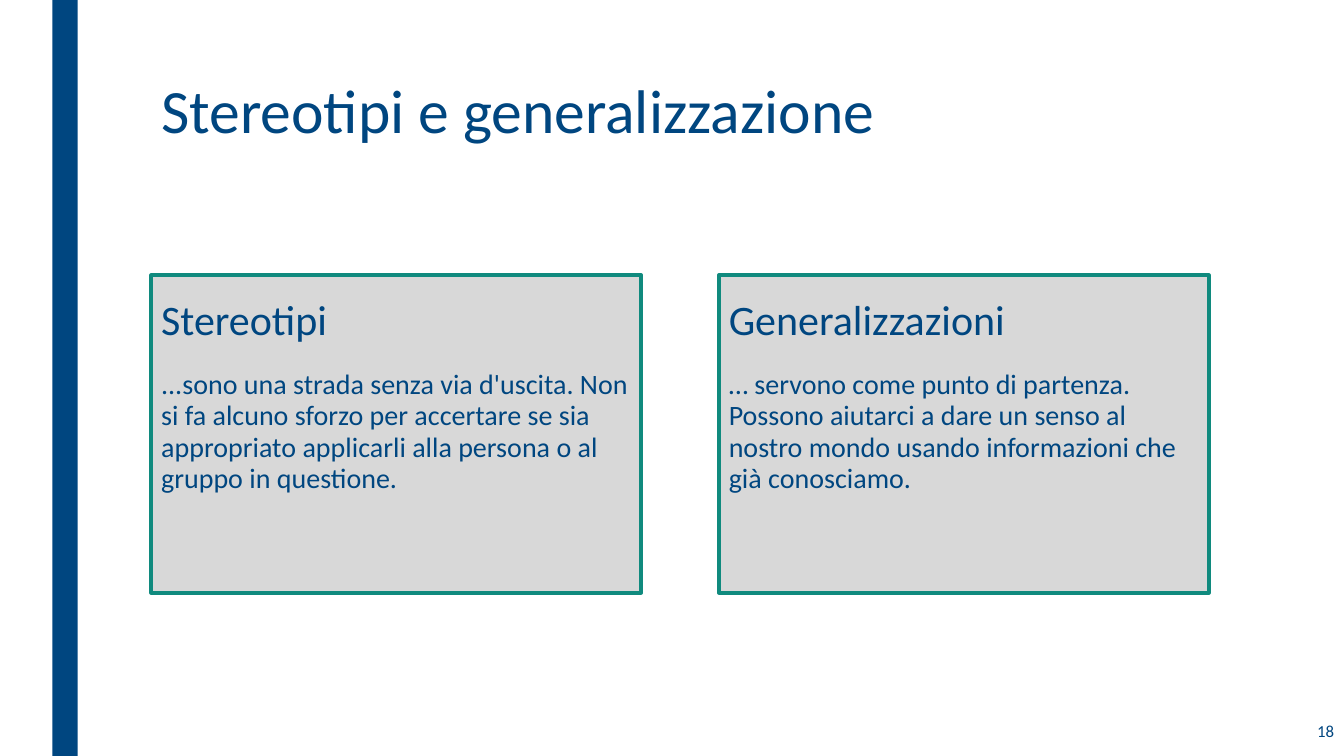
from dataclasses import dataclass

from pptx import Presentation
from pptx.dml.color import RGBColor
from pptx.enum.shapes import MSO_SHAPE
from pptx.enum.text import MSO_ANCHOR, PP_ALIGN
from pptx.util import Inches, Pt

RECTANGLE = MSO_SHAPE.RECTANGLE
TOP, MIDDLE, BOTTOM = MSO_ANCHOR.TOP, MSO_ANCHOR.MIDDLE, MSO_ANCHOR.BOTTOM
LEFT, RIGHT = PP_ALIGN.LEFT, PP_ALIGN.RIGHT


@dataclass(frozen=True)
class Theme:
    font: str = "Calibri"
    navy: RGBColor = RGBColor(0x00, 0x46, 0x80)
    grey: RGBColor = RGBColor(0xD8, 0xD8, 0xD8)
    green: RGBColor = RGBColor(0x10, 0x8A, 0x7E)
    title_size: int = 44
    heading_size: int = 30
    body_size: int = 20
    number_size: int = 12
    border_width: float = 2.75


THEME = Theme()
CARD_LEFT = 1.5
CARD_WIDTH = 4.86
CARD_STEP = 5.63
CARDS = [
    ("Stereotipi",
     "...sono una strada senza via d'uscita. Non si fa alcuno sforzo per accertare "
     "se sia appropriato applicarli alla persona o al gruppo in questione."),
    ("Generalizzazioni",
     "… servono come punto di partenza. Possono aiutarci a dare un senso al nostro "
     "mondo usando informazioni che già conosciamo."),
]


def add_panel(page, left, top, width, height, fill, border=None):
    panel = page.shapes.add_shape(
        RECTANGLE, Inches(left), Inches(top), Inches(width), Inches(height))
    panel.shadow.inherit = False
    panel.fill.solid()
    panel.fill.fore_color.rgb = fill
    if border is None:
        panel.line.fill.background()
    else:
        panel.line.color.rgb = border
        panel.line.width = Pt(THEME.border_width)


def add_text(page, text, left, top, width, height, size,
             spacing=1.0, anchor=TOP, align=LEFT):
    box = page.shapes.add_textbox(
        Inches(left), Inches(top), Inches(width), Inches(height))
    frame = box.text_frame
    frame.word_wrap = True
    frame.vertical_anchor = anchor
    frame.text = text
    para = frame.paragraphs[0]
    para.alignment = align
    para.line_spacing = spacing
    span = para.runs[0]
    span.font.name = THEME.font
    span.font.size = Pt(size)
    span.font.color.rgb = THEME.navy


def add_card(page, left, heading, body):
    add_panel(page, left, 2.73, CARD_WIDTH, 3.15, THEME.grey, THEME.green)
    add_text(page, heading, left, 2.56, CARD_WIDTH, 0.9, THEME.heading_size,
             spacing=0.84, anchor=BOTTOM)
    add_text(page, body, left, 3.61, CARD_WIDTH, 2.8, THEME.body_size, spacing=0.94)


def main():
    deck = Presentation()
    deck.slide_width = Inches(13.33)
    deck.slide_height = Inches(7.5)
    page = deck.slides.add_slide(deck.slide_layouts[6])

    add_panel(page, 0.52, 0, 0.25, 7.5, THEME.navy)
    add_text(page, "Stereotipi e generalizzazione", CARD_LEFT, 0.75, 10.5, 0.8,
             THEME.title_size, spacing=0.89)
    for index, (heading, body) in enumerate(CARDS):
        add_card(page, CARD_LEFT + index * CARD_STEP, heading, body)
    add_text(page, "18", 11.58, 7.03, 1.75, 0.44, THEME.number_size,
             anchor=MIDDLE, align=RIGHT)

    deck.save("out.pptx")


if __name__ == "__main__":
    main()
